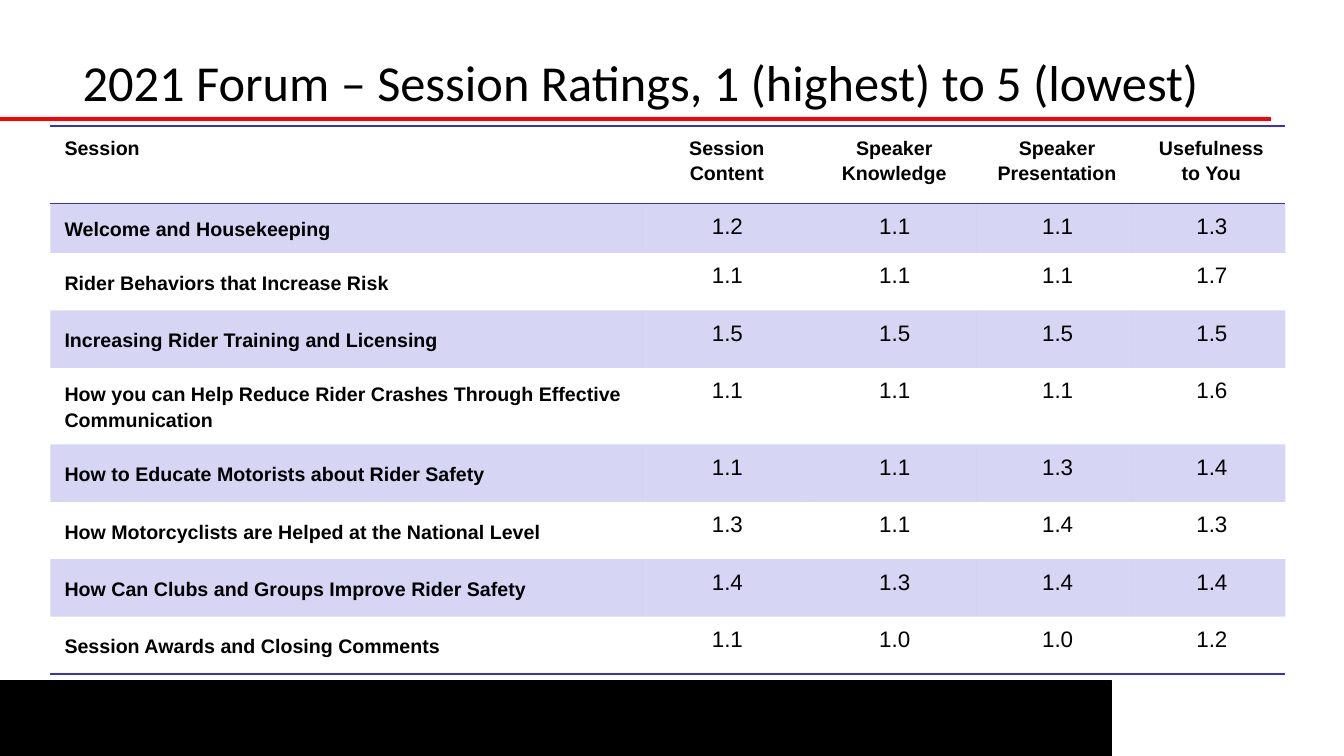
from dataclasses import dataclass

from lxml import etree
from pptx import Presentation
from pptx.dml.color import RGBColor
from pptx.enum.shapes import MSO_CONNECTOR, MSO_SHAPE
from pptx.enum.text import MSO_ANCHOR, PP_ALIGN
from pptx.oxml import parse_xml
from pptx.oxml.ns import nsdecls, qn
from pptx.util import Inches, Pt

STRAIGHT = MSO_CONNECTOR.STRAIGHT
RECTANGLE = MSO_SHAPE.RECTANGLE
TOP, MIDDLE = MSO_ANCHOR.TOP, MSO_ANCHOR.MIDDLE
LEFT, CENTER = PP_ALIGN.LEFT, PP_ALIGN.CENTER
NO_GRID_STYLE = "{2D5ABB26-0587-4C30-8999-92F81FD0307C}"


@dataclass(frozen=True)
class Theme:
    text: str = "000000"
    rule: str = "FF0000"
    footer: str = "000000"
    accent: str = "3333CC"
    band_alpha: int = 20
    title_font: str = "Calibri"
    body_font: str = "Arial"
    title_size: int = 36
    label_size: int = 14
    rating_size: int = 16
    line_spacing: float = 1.15


HEADERS = ["Session", "Session Content", "Speaker Knowledge",
           "Speaker\nPresentation", "Usefulness\nto You"]
RATINGS = [
    ("Welcome and Housekeeping", 1.2, 1.1, 1.1, 1.3),
    ("Rider Behaviors that Increase Risk", 1.1, 1.1, 1.1, 1.7),
    ("Increasing Rider Training and Licensing", 1.5, 1.5, 1.5, 1.5),
    ("How you can Help Reduce Rider Crashes Through Effective Communication",
     1.1, 1.1, 1.1, 1.6),
    ("How to Educate Motorists about Rider Safety", 1.1, 1.1, 1.3, 1.4),
    ("How Motorcyclists are Helped at the National Level", 1.3, 1.1, 1.4, 1.3),
    ("How Can Clubs and Groups Improve Rider Safety", 1.4, 1.3, 1.4, 1.4),
    ("Session Awards and Closing Comments", 1.1, 1.0, 1.0, 1.2),
]
COL_WIDTHS = [5.87, 1.62, 1.7, 1.53, 1.53]
ROW_HEIGHTS = [0.77, 0.49, 0.57, 0.57, 0.76, 0.57, 0.57, 0.57, 0.57]


def apply(target, values):
    for name, value in values.items():
        setattr(target, name, value)


class SlideBuilder:
    def __init__(self, prs, theme):
        self.theme = theme
        self.s = prs.slides.add_slide(prs.slide_layouts[5])

    def put_text(self, tf, text, font, size, bold=False, align=LEFT, spacing=1.0):
        tf.text = text
        for p in tf.paragraphs:
            apply(p, {"alignment": align, "line_spacing": spacing})
            for r in p.runs:
                apply(r.font, {"name": font, "size": Pt(size), "bold": bold})
                r.font.color.rgb = RGBColor.from_string(self.theme.text)

    def title(self, text, left, top, width, height):
        sp = self.s.shapes.title
        apply(sp, {"left": Inches(left), "top": Inches(top),
                   "width": Inches(width), "height": Inches(height)})
        apply(sp.text_frame, {"vertical_anchor": MIDDLE, "word_wrap": True})
        self.put_text(sp.text_frame, text, self.theme.title_font, self.theme.title_size)

    def rule(self, x1, x2, y, width):
        line = self.s.shapes.add_connector(
            STRAIGHT, Inches(x1), Inches(y), Inches(x2), Inches(y))
        line.line.width = Pt(width)
        line.line.color.rgb = RGBColor.from_string(self.theme.rule)
        etree.SubElement(line._element.spPr, qn("a:effectLst"))

    def bar(self, left, top, width, height):
        sp = self.s.shapes.add_shape(
            RECTANGLE, Inches(left), Inches(top), Inches(width), Inches(height))
        sp.shadow.inherit = False
        sp.fill.solid()
        for color in (sp.fill.fore_color, sp.line.color):
            color.rgb = RGBColor.from_string(self.theme.footer)
        sp.line.width = Pt(0.75)

    def border(self, cell, side):
        cell._tc.get_or_add_tcPr().append(parse_xml(
            f'<a:{side} {nsdecls("a")} w="{Pt(1)}"><a:solidFill>'
            f'<a:srgbClr val="{self.theme.accent}"/></a:solidFill></a:{side}>'))

    def shade(self, cell, banded):
        if not banded:
            cell.fill.background()
            return
        cell.fill.solid()
        cell.fill.fore_color.rgb = RGBColor.from_string(self.theme.accent)
        color = next(cell._tc.tcPr.iter(qn("a:srgbClr")))
        etree.SubElement(color, qn("a:alpha"), val=str(self.theme.band_alpha * 1000))

    def cell(self, cell, text, row, col, last_row):
        header, label = row == 0, row == 0 or col == 0
        inset = Inches(0.08 if header else 0.07)
        apply(cell, {"margin_left": Inches(0.14), "margin_right": inset,
                     "margin_top": inset, "margin_bottom": inset,
                     "vertical_anchor": MIDDLE if col == 0 and not header else TOP})
        self.put_text(cell.text_frame, text, self.theme.body_font,
                      self.theme.label_size if label else self.theme.rating_size,
                      label, CENTER if col else LEFT, self.theme.line_spacing)
        if header:
            self.border(cell, "lnT")
        if row in (0, last_row):
            self.border(cell, "lnB")
        self.shade(cell, row % 2 == 1)

    def table(self, rows, left, top):
        table = self.s.shapes.add_table(
            len(rows), len(COL_WIDTHS), Inches(left), Inches(top),
            Inches(sum(COL_WIDTHS)), Inches(sum(ROW_HEIGHTS))).table
        table.horz_banding = False
        table._tbl.tblPr.find(qn("a:tableStyleId")).text = NO_GRID_STYLE
        for column, width in zip(table.columns, COL_WIDTHS):
            column.width = Inches(width)
        for i, (row, height) in enumerate(zip(rows, ROW_HEIGHTS)):
            table.rows[i].height = Inches(height)
            for j, value in enumerate(row):
                self.cell(table.cell(i, j), str(value), i, j, len(rows) - 1)


def main():
    prs = Presentation()
    apply(prs, {"slide_width": Inches(13.33), "slide_height": Inches(7.5)})
    slide = SlideBuilder(prs, Theme())
    slide.title("2021 Forum – Session Ratings, 1 (highest) to 5 (lowest)",
                0.72, 0.1, 11.89, 1.42)
    slide.rule(0, 12.61, 1.18, 3)
    slide.bar(-0.08, 6.75, 11.1, 0.79)
    slide.table([HEADERS, *RATINGS], 0.5, 1.25)
    prs.save("out.pptx")


if __name__ == "__main__":
    main()
